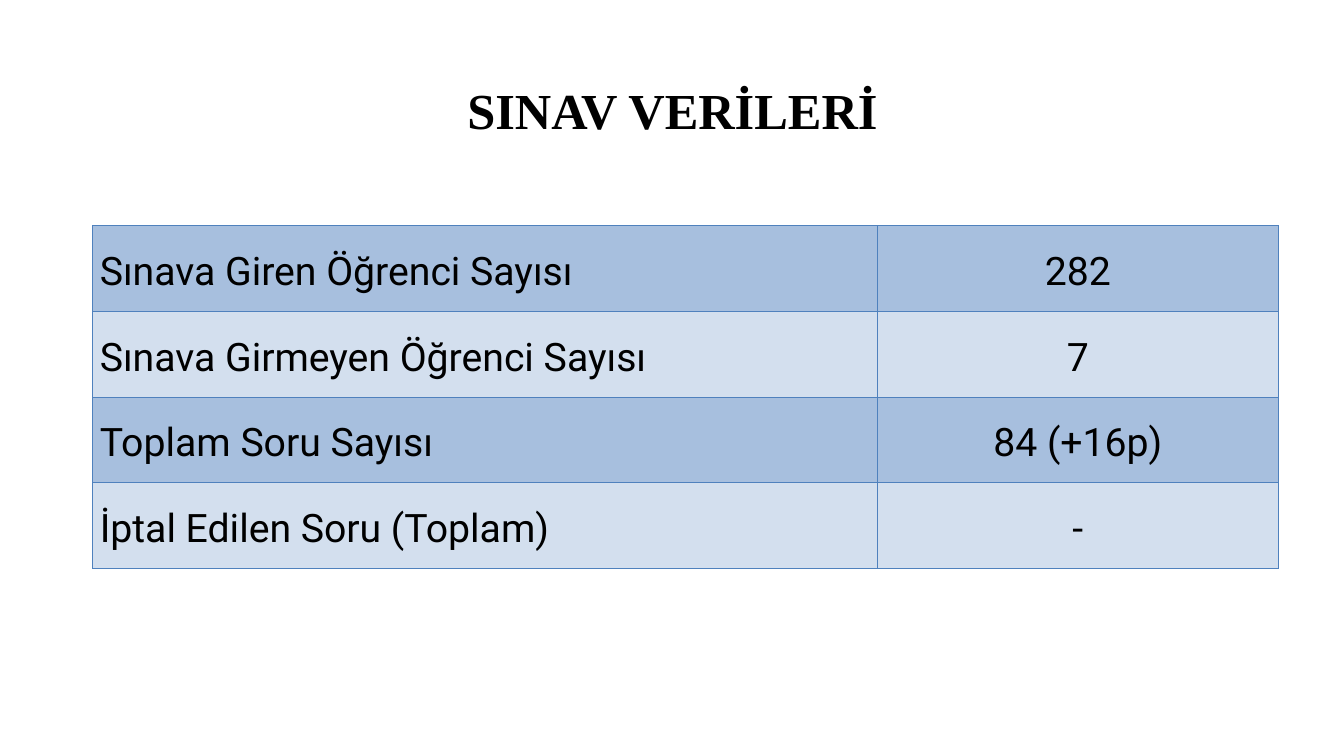
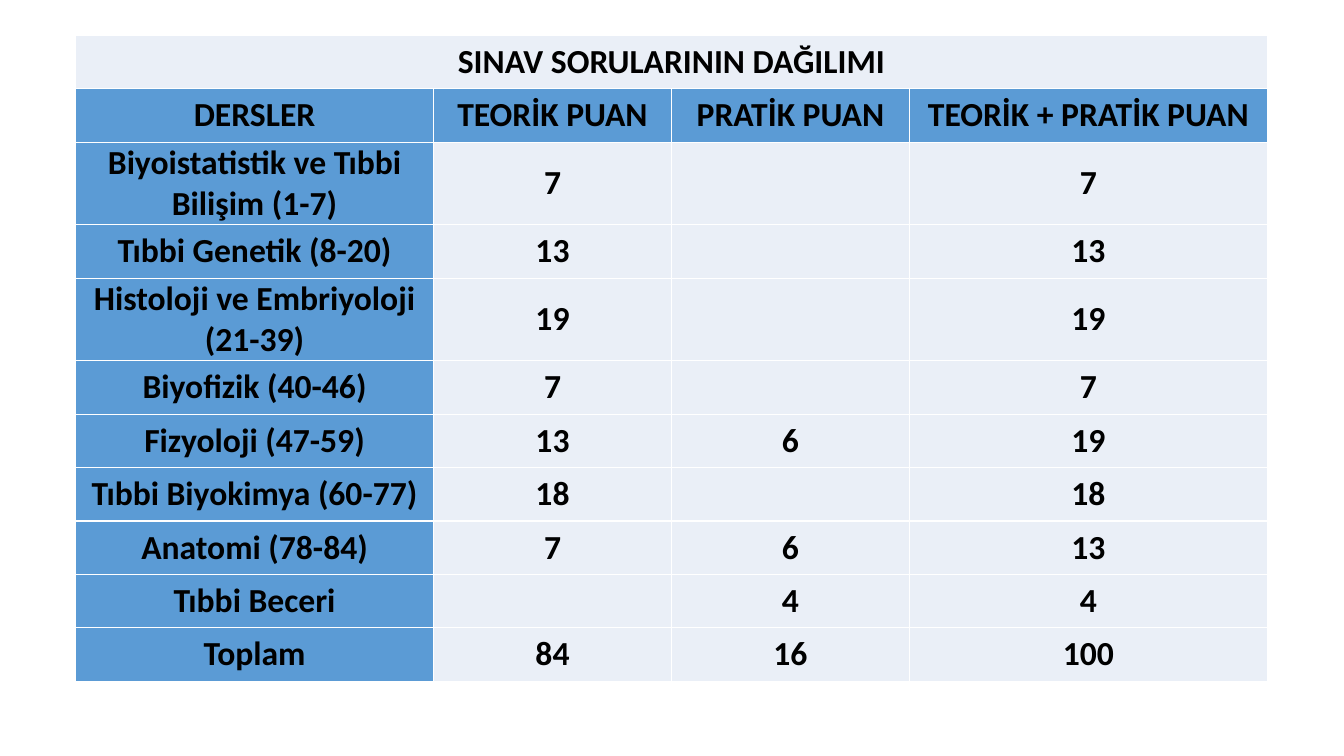
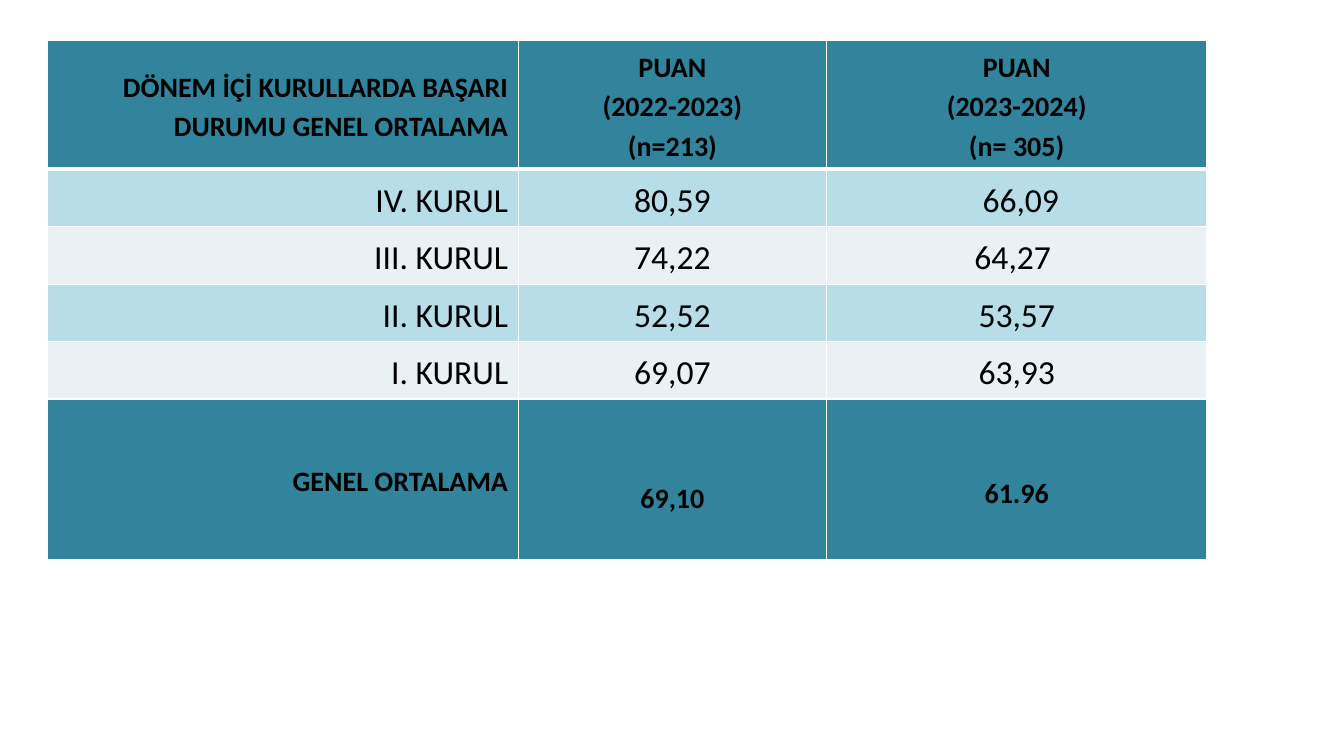
from lxml.etree import SubElement
from pptx import Presentation
from pptx.dml.color import RGBColor
from pptx.enum.text import MSO_ANCHOR as Anchor, PP_ALIGN as Align
from pptx.oxml.ns import qn
from pptx.util import Inches, Pt

# Colours
BLACK = RGBColor(0x00, 0x00, 0x00)
WHITE = RGBColor(0xFF, 0xFF, 0xFF)
BORDER_BLUE = RGBColor(0x4F, 0x81, 0xBD)
BAND_BLUE = RGBColor(0xA7, 0xBF, 0xDE)
BAND_PALE = RGBColor(0xD3, 0xDF, 0xEE)
HEAD_BLUE = RGBColor(0x5B, 0x9B, 0xD5)
BODY_PALE = RGBColor(0xEA, 0xEF, 0xF7)
HEAD_TEAL = RGBColor(0x31, 0x84, 0x9B)
BAND_TEAL = RGBColor(0xB6, 0xDD, 0xE8)
BAND_GREY = RGBColor(0xE9, 0xF1, 0xF5)


class Deck:
    """Holds the shared style and the current slide."""

    title_format = dict(name="Times New Roman", size=Pt(36), bold=True)

    def __init__(self):
        self.prs = Presentation()
        self.prs.slide_width = Inches(13.33)
        self.prs.slide_height = Inches(7.5)
        self.slide = None

    def new_slide(self):
        self.slide = self.prs.slides.add_slide(self.prs.slide_layouts[6])

    @staticmethod
    def apply(target, values):
        for key, value in values.items():
            setattr(target, key, value)

    def add_lines(self, frame, text, font, align, spacing):
        for index, line in enumerate(text.split("\n")):
            paragraph = frame.add_paragraph() if index else frame.paragraphs[0]
            self.apply(paragraph, dict(alignment=align, line_spacing=spacing))
            run = paragraph.add_run()
            run.text = line
            self.apply(run.font, font)
            run.font.color.rgb = BLACK

    def title(self, text):
        box = self.slide.shapes.add_textbox(
            Inches(0.92), Inches(0.4), Inches(11.5), Inches(1.45))
        self.apply(box.text_frame,
                   dict(word_wrap=True, vertical_anchor=Anchor.MIDDLE))
        self.add_lines(box.text_frame, text, self.title_format, Align.CENTER, 0.9)

    @staticmethod
    def borders(cell, color, widths):
        properties = cell._tc.get_or_add_tcPr()
        for side, width in zip("LRTB", widths):
            line = SubElement(properties, qn(f"a:ln{side}"), w=str(Pt(width)))
            fill = SubElement(line, qn("a:solidFill"))
            SubElement(fill, qn("a:srgbClr"), val=str(color))

    def table(self, left, top, widths, heights, rows, style, border, spacing=1.0,
              heavy_head=False):
        """style(row, column) gives fill, font, alignment and cell format."""
        grid = self.slide.shapes.add_table(
            len(rows), len(widths), Inches(left), Inches(top),
            Inches(sum(widths)), Inches(sum(heights))).table
        self.apply(grid, dict(first_row=False, horz_banding=False))
        for column, width in zip(grid.columns, widths):
            column.width = Inches(width)
        for r, (height, texts) in enumerate(zip(heights, rows)):
            grid.rows[r].height = Inches(height)
            if len(texts) < len(widths):
                grid.cell(r, 0).merge(grid.cell(r, len(widths) - 1))
            for c in range(len(widths)):
                cell = grid.cell(r, c)
                fill, font, align, cell_format = style(r, c)
                above = 3 if heavy_head and r == 1 else 1
                below = 3 if heavy_head and r == 0 else 1
                self.borders(cell, border, (1, 1, above, below))
                cell.fill.solid()
                cell.fill.fore_color.rgb = fill
                self.apply(cell, dict(vertical_anchor=Anchor.MIDDLE) | cell_format)
                if c < len(texts) and texts[c]:
                    self.add_lines(cell.text_frame, texts[c], font, align, spacing)


def margins(side, end):
    return dict(margin_left=Inches(side), margin_right=Inches(side),
                margin_top=Inches(end), margin_bottom=Inches(end))


def exam_style(row, column):
    fill = BAND_PALE if row % 2 else BAND_BLUE
    align = Align.CENTER if column else Align.LEFT
    return fill, dict(name="Roboto", size=Pt(28), bold=False), align, margins(0.07, 0)


def questions_style(row, column):
    is_head = row == 1 or (row > 1 and column == 0)
    font = dict(name="Calibri", size=Pt(24), bold=True)
    return HEAD_BLUE if is_head else BODY_PALE, font, Align.CENTER, margins(0, 0)


# Score cells that sit slightly off the middle
SCORE_SHIFTS = {
    (1, 2): dict(margin_left=Inches(0.08)),
    (2, 2): dict(margin_right=Inches(0.08)),
    (5, 1): dict(margin_top=Inches(0.39)),
    (5, 2): dict(margin_top=Inches(0.72), vertical_anchor=Anchor.TOP),
}


def averages_style(row, column):
    is_head = row in (0, 5)
    fill = HEAD_TEAL if is_head else BAND_TEAL if row % 2 else BAND_GREY
    font = dict(name="Calibri", size=Pt(20 if is_head else 24), bold=is_head)
    cell_format = margins(0, 0) if column == 2 else margins(0.1, 0.05)
    return (fill, font, Align.CENTER if column else Align.RIGHT,
            cell_format | SCORE_SHIFTS.get((row, column), {}))


def main():
    deck = Deck()

    # Exam figures
    deck.new_slide()
    deck.title("SINAV VERİLERİ")
    exam_rows = [
        ("Sınava Giren Öğrenci Sayısı", "282"),
        ("Sınava Girmeyen Öğrenci Sayısı", "7"),
        ("Toplam Soru Sayısı", "84 (+16p)"),
        ("İptal Edilen Soru (Toplam)", "-"),
    ]
    deck.table(0.92, 2.24, [7.78, 3.98], [0.85] * 4, exam_rows, exam_style,
               BORDER_BLUE, spacing=1.15)

    # Distribution of questions
    deck.new_slide()
    question_rows = [
        ("SINAV SORULARININ DAĞILIMI",),
        ("DERSLER", "TEORİK PUAN", "PRATİK PUAN", "TEORİK + PRATİK PUAN"),
        ("Biyoistatistik ve Tıbbi Bilişim (1-7)", "7", "", "7"),
        ("Tıbbi Genetik (8-20)", "13", "", "13"),
        ("Histoloji ve Embriyoloji (21-39)", "19", "", "19"),
        ("Biyofizik (40-46)", "7", "", "7"),
        ("Fizyoloji (47-59)", "13", "6", "19"),
        ("Tıbbi Biyokimya (60-77)", "18", "", "18"),
        ("Anatomi (78-84)", "7", "6", "13"),
        ("Tıbbi Beceri", "", "4", "4"),
        ("Toplam", "84", "16", "100"),
    ]
    question_heights = [0.82 if r in (2, 4) else 0.53
                        for r in range(len(question_rows))]
    deck.table(0.75, 0.35, [3.55, 2.36, 2.36, 3.55], question_heights,
               question_rows, questions_style, WHITE)

    # Averages of the committees
    deck.new_slide()
    average_rows = [
        ("DÖNEM İÇİ KURULLARDA BAŞARI DURUMU GENEL ORTALAMA",
         "PUAN\n(2022-2023)\n(n=213)", "PUAN\n(2023-2024)\n(n= 305)"),
        ("IV. KURUL", "80,59", "66,09"),
        ("III. KURUL", "74,22", "64,27"),
        ("II. KURUL", "52,52", "53,57"),
        ("I. KURUL", "69,07", "63,93"),
        ("GENEL ORTALAMA", "69,10", "61.96"),
    ]
    deck.table(0.47, 0.4, [4.67, 3.06, 3.77], [1.28] + [0.57] * 4 + [1.59],
               average_rows, averages_style, WHITE, spacing=1.15, heavy_head=True)

    deck.prs.save("out.pptx")


if __name__ == "__main__":
    main()
